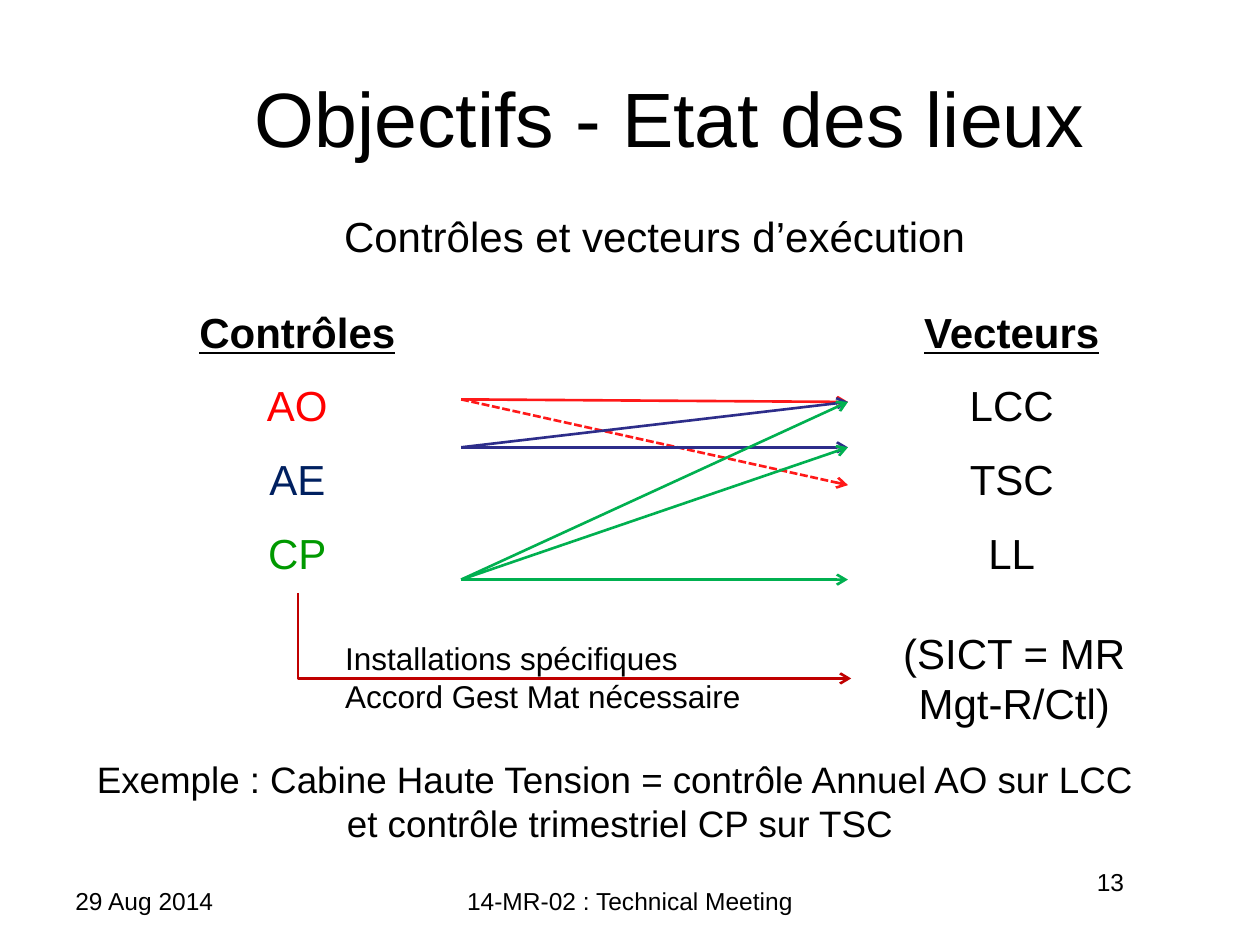
import pptx
import pptx.util
import pptx.dml.color
import pptx.enum.dml
import pptx.enum.shapes
import pptx.enum.text
import lxml.etree

Inch, Pt = pptx.util.Inches, pptx.util.Pt
RGB = pptx.dml.color.RGBColor.from_string
Kind = pptx.enum.shapes.MSO_CONNECTOR
Align = pptx.enum.text.PP_ALIGN
Anchor = pptx.enum.text.MSO_ANCHOR

theme = dict(
    font="Arial", ink="000000", paper="FFFFFF",
    ao="FF0000", ae="002060", cp="009900",
    red="FF1919", blue="2D2D8A", green="00B050", dark="C00000",
    title=44, body=24, case=21, note=18, foot=14, line=1.5, gap=13.3,
)

deck = pptx.Presentation()
deck.slide_width, deck.slide_height = Inch(10), Inch(7.5)
slide = deck.slides.add_slide(deck.slide_layouts[5])


def write(shape, lines, size, align=Align.CENTER, gap=0, anchor=Anchor.TOP):
    """Fill a shape with lines, each a (text, colour) pair."""
    frame = shape.text_frame
    frame.word_wrap = True
    frame.vertical_anchor = anchor
    frame.text = "\n".join(text for text, _ in lines)
    for n, (para, (_, ink)) in enumerate(zip(frame.paragraphs, lines)):
        para.alignment = align
        if n and gap:
            para.space_before = Pt(gap)
        for run in para.runs:
            run.font.name = theme["font"]
            run.font.size = Pt(theme[size])
            run.font.color.rgb = RGB(theme[ink])


def arrow(start, end, ink, kind=Kind.STRAIGHT):
    """Draw a line with an open arrowhead at its end."""
    link = slide.shapes.add_connector(kind, *map(Inch, start + end))
    link.line.color.rgb = RGB(theme[ink])
    link.line.width = Pt(theme["line"])
    props = link._element.spPr
    ns = pptx.oxml.ns.qn
    lxml.etree.SubElement(props, ns("a:effectLst"))
    return link


# Title
title = slide.shapes.title
title.left, title.top, title.width, title.height = map(Inch, (1.14, 0.3, 8.36, 1.25))
write(title, [("Objectifs - Etat des lieux", "ink")], "title", anchor=Anchor.MIDDLE)

# Page number, date and meeting
for text, box, align in (
    ("13", (7.17, 6.83, 1.85, 0.52), Align.RIGHT),
    ("29 Aug 2014", (0.5, 6.98, 2.33, 0.37), Align.LEFT),
    ("14-MR-02 : Technical Meeting", (3.11, 6.98, 3.78, 0.37), Align.CENTER),
):
    write(slide.shapes.add_textbox(*map(Inch, box)), [(text, "ink")], "foot", align)

# Columns of the diagram
left, right, wide = 1.06, 6.73, 2.6
edge = left + wide
span = right + wide - left

# White panels: heading, both lists, extra vector, example
for box, lines, size, gap, head in (
    ((left, 1.62, span, 0.51),
     [("Contrôles et vecteurs d’exécution", "ink")], "body", 0, False),
    ((left, 2.38, wide, 2.32),
     [("Contrôles", "ink"), ("AO", "ao"), ("AE", "ae"), ("CP", "cp")],
     "body", theme["gap"], True),
    ((right, 2.38, wide, 2.32),
     [("Vecteurs", "ink"), ("LCC", "ink"), ("TSC", "ink"), ("LL", "ink")],
     "body", theme["gap"], True),
    ((right + 0.02, 4.93, wide, 0.91),
     [("(SICT = MR Mgt-R/Ctl)", "ink")], "body", 0, False),
    ((0.51, 5.96, 8.82, 0.81),
     [("Exemple : Cabine Haute Tension = contrôle Annuel AO sur LCC ", "ink"),
      ("et contrôle trimestriel CP sur TSC", "ink")], "case", 0, False),
):
    panel = slide.shapes.add_shape(
        pptx.enum.shapes.MSO_SHAPE.RECTANGLE, *map(Inch, box))
    panel.shadow.inherit = False
    panel.fill.solid()
    panel.fill.fore_color.rgb = RGB(theme["paper"])
    panel.line.fill.background()
    write(panel, lines, size, gap=gap)
    if head:
        font = panel.text_frame.paragraphs[0].runs[0].font
        font.bold = font.underline = True

# Links from controls to vectors
links = []
for ink, start, ends in (
    ("red", 3.17, (3.19, 3.85)),
    ("blue", 3.55, (3.55, 3.19)),
    ("green", 4.6, (4.6, 3.55, 3.19)),
):
    for end in ends:
        links.append(arrow((edge, start), (right, end), ink))
links[1].line.dash_style = pptx.enum.dml.MSO_LINE.SQUARE_DOT

# Elbow from the controls to the extra vector, turned a quarter
elbow = arrow((4.9, 2.85), (4.22, 7.24), "dark", Kind.ELBOW)
props = elbow._element.spPr
props.find(pptx.oxml.ns.qn("a:xfrm")).set("rot", "16200000")
props.find(pptx.oxml.ns.qn("a:prstGeom")).set("prst", "bentConnector2")

# Arrowheads come last in each line, after any dash
for link in links + [elbow]:
    line = link._element.spPr.find(pptx.oxml.ns.qn("a:ln"))
    lxml.etree.SubElement(line, pptx.oxml.ns.qn("a:tailEnd")).set("type", "arrow")

# Note on the elbow
note = slide.shapes.add_textbox(*map(Inch, (2.64, 5.02, 3.51, 0.71)))
write(note, [("Installations spécifiques", "ink"),
             ("Accord Gest Mat nécessaire", "ink")], "note", Align.LEFT)

deck.save("out.pptx")
